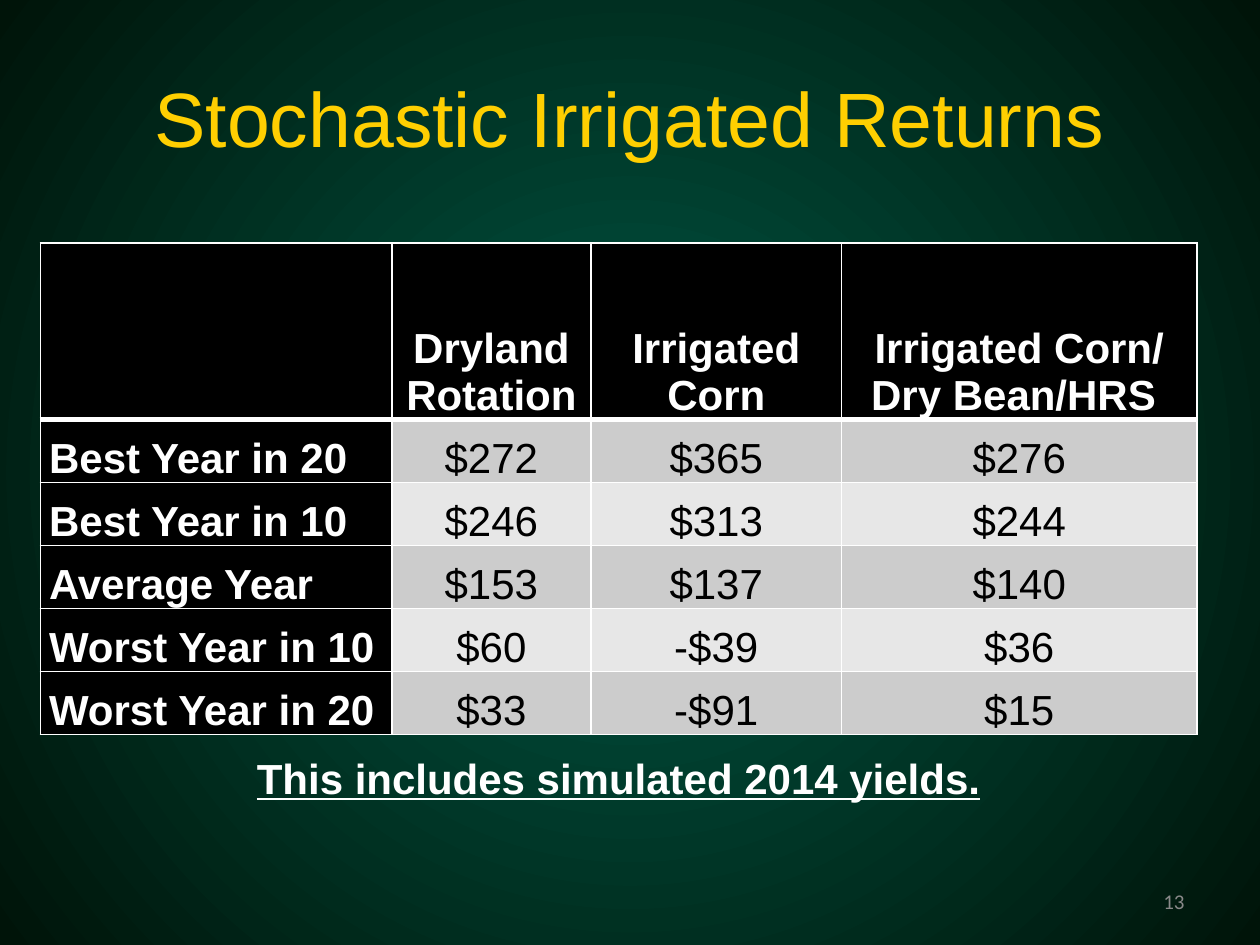
import dataclasses

import lxml.etree
import pptx
import pptx.dml.color
import pptx.enum.text
import pptx.oxml.ns
import pptx.util

Inches = pptx.util.Inches
Pt = pptx.util.Pt
RGB = pptx.dml.color.RGBColor.from_string
qn = pptx.oxml.ns.qn
ALIGN = pptx.enum.text.PP_ALIGN
ANCHOR = pptx.enum.text.MSO_ANCHOR


@dataclasses.dataclass(frozen=True)
class Theme:
    glow: str = "005643"
    edge: str = "001409"
    gold: str = "FFCF01"
    white: str = "FFFFFF"
    black: str = "000000"
    grey: str = "898989"
    bands: tuple = ("CCCCCC", "E7E7E7")
    font: str = "Arial"
    number_font: str = "Calibri"
    title_size: int = 44
    body_size: int = 24
    number_size: int = 12


THEME = Theme()

HEADERS = ["", "Dryland\nRotation ", "Irrigated Corn", "Irrigated Corn/ Dry Bean/HRS "]
RETURNS = [
    ["Best Year in 20", "$272", "$365", "$276"],
    ["Best Year in 10", "$246", "$313", "$244"],
    ["Average Year", "$153", "$137", "$140"],
    ["Worst Year in 10", "$60", "-$39", "$36"],
    ["Worst Year in 20", "$33", "-$91", "$15"],
]
COLUMN_WIDTHS = [2.79, 1.58, 1.99, 2.82]
HEADER_HEIGHT = 1.4


def style_text(tf, size, color, align, bold=False, underline=False, font=THEME.font):
    for p in tf.paragraphs:
        p.alignment = align
        for r in p.runs:
            r.font.name = font
            r.font.size = Pt(size)
            r.font.bold = bold
            r.font.underline = underline
            r.font.color.rgb = RGB(color)


def set_borders(cell, widths):
    tc_pr = cell._tc.get_or_add_tcPr()
    for i, (side, width) in enumerate(widths.items()):
        ln = lxml.etree.Element(qn(f"a:ln{side}"), w=str(Pt(width)))
        fill = lxml.etree.SubElement(ln, qn("a:solidFill"))
        lxml.etree.SubElement(fill, qn("a:srgbClr"), val=THEME.white)
        tc_pr.insert(i, ln)


def add_background(s):
    fill = s.background.fill
    fill.gradient()
    stops = ((0.02, THEME.glow), (1, THEME.edge))
    for stop, (position, color) in zip(fill.gradient_stops, stops):
        stop.position = position
        stop.color.rgb = RGB(color)
    lin = s._element.find(".//" + qn("a:lin"))
    radial = lxml.etree.Element(qn("a:path"))
    radial.set("path", "circle")
    center = {side: "50000" for side in "ltrb"}
    lxml.etree.SubElement(radial, qn("a:fillToRect"), center)
    lin.getparent().replace(lin, radial)


def add_title(s, left, top, width, height):
    sp = s.shapes.title
    sp.left, sp.top = Inches(left), Inches(top)
    sp.width, sp.height = Inches(width), Inches(height)
    tf = sp.text_frame
    tf.text = "Stochastic Irrigated Returns"
    tf.vertical_anchor = ANCHOR.MIDDLE
    style_text(tf, THEME.title_size, THEME.gold, ALIGN.CENTER)


def add_returns_table(s, left, top, width, height):
    rows = [HEADERS] + RETURNS
    table = s.shapes.add_table(
        len(rows), len(HEADERS), Inches(left), Inches(top), Inches(width), Inches(height)
    ).table
    for column, share in zip(table.columns, COLUMN_WIDTHS):
        column.width = Inches(width * share / sum(COLUMN_WIDTHS))
    row_height = (height - HEADER_HEIGHT) / len(RETURNS)
    for i, values in enumerate(rows):
        table.rows[i].height = Inches(row_height if i else HEADER_HEIGHT)
        for j, value in enumerate(values):
            heading = i == 0 or j == 0
            cell = table.cell(i, j)
            cell.text = value
            cell.vertical_anchor = ANCHOR.BOTTOM
            cell.margin_left = cell.margin_right = Inches(0.07)
            cell.margin_top = cell.margin_bottom = 0
            cell.fill.solid()
            cell.fill.fore_color.rgb = RGB(THEME.black if heading else THEME.bands[(i - 1) % 2])
            style_text(
                cell.text_frame,
                THEME.body_size,
                THEME.white if heading else THEME.black,
                ALIGN.LEFT if j == 0 else ALIGN.CENTER,
                bold=heading,
            )
            set_borders(cell, {"L": 1, "R": 1, "T": 3 if i == 1 else 1, "B": 1 if i else 3})


def add_text(s, text, left, top, width, height, anchor, **style):
    sp = s.shapes.add_textbox(Inches(left), Inches(top), Inches(width), Inches(height))
    tf = sp.text_frame
    tf.word_wrap = True
    tf.text = text
    tf.vertical_anchor = anchor
    style_text(tf, **style)


def main():
    prs = pptx.Presentation()
    prs.slide_width, prs.slide_height = Inches(10), Inches(7.5)
    s = prs.slides.add_slide(prs.slide_layouts[5])
    add_background(s)
    add_title(s, 0.5, 0.3, 9, 1.25)
    add_text(
        s, "13", 7.17, 6.95, 2.33, 0.4, ANCHOR.MIDDLE,
        size=THEME.number_size, color=THEME.grey, align=ALIGN.RIGHT, font=THEME.number_font,
    )
    add_returns_table(s, 0.32, 1.93, 9.18, 3.9)
    add_text(
        s, "This includes simulated 2014 yields.", 0.5, 5.92, 8.82, 0.5, ANCHOR.TOP,
        size=THEME.body_size, color=THEME.white, align=ALIGN.CENTER, bold=True, underline=True,
    )
    prs.save("out.pptx")


if __name__ == "__main__":
    main()
